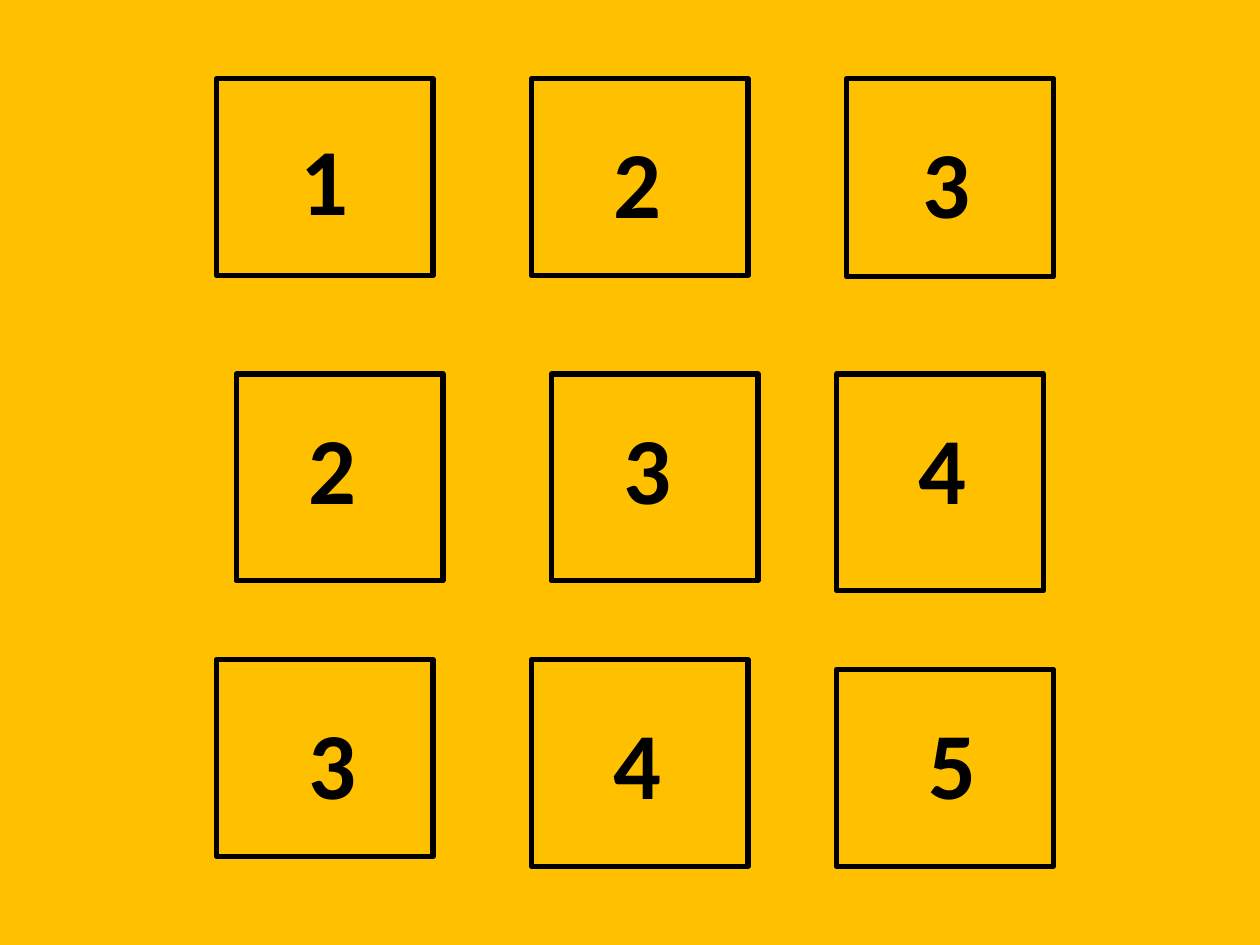
from pptx import Presentation
from pptx.dml.color import RGBColor
from pptx.enum.shapes import MSO_SHAPE as Shape
from pptx.enum.text import MSO_ANCHOR as Anchor, MSO_AUTO_SIZE as AutoSize, PP_ALIGN as Align
from pptx.oxml.ns import qn
from pptx.util import Inches, Pt
from lxml.etree import SubElement

UNIT = 10 / 128  # the slide is 128 columns by 96 rows


def color(hex_code):
    return RGBColor.from_string(hex_code)


class Board:
    ink, ground, font, size, border = "000000", "FFC000", "Calibri", 54, 3

    def __init__(self, deck):
        self.slide = deck.slides.add_slide(deck.slide_layouts[6])
        fill = self.slide.background.fill
        fill.solid()
        fill.fore_color.rgb = color(self.ground)

    def grid(self, *cells):
        return [Inches(cell * UNIT) for cell in cells]

    def square(self, col, row, cols, rows):
        box = self.slide.shapes.add_shape(Shape.RECTANGLE, *self.grid(col, row, cols, rows))
        box.shadow.inherit = False
        box.fill.background()
        box.line.color.rgb = color(self.ink)
        box.line.width = Pt(self.border)
        SubElement(box.element.spPr.find(qn("a:ln")), qn("a:round"))
        return box

    def add_number(self, frame, number):
        paragraph = frame.paragraphs[0]
        paragraph.alignment = Align.CENTER
        run = paragraph.add_run()
        run.text = str(number)
        run.font.name, run.font.size, run.font.bold = self.font, Pt(self.size), True
        run.font.color.rgb = color(self.ink)

    def label(self, col, row, number):
        frame = self.slide.shapes.add_textbox(*self.grid(col, row, 7.5, 13)).text_frame
        frame.word_wrap = False
        frame.auto_size = AutoSize.SHAPE_TO_FIT_TEXT
        self.add_number(frame, number)


# Squares as column, row, width, height; label columns and rows
SQUARES = [
    [(22, 8, 22, 20), (54, 8, 22, 20), (86, 8, 21, 20.1)],
    [(24, 38, 21, 21), (56, 38, 21, 21), (85, 38, 21, 22)],
    [(22, 67, 22, 20), (54, 67, 22, 21), (85, 68, 22, 20)],
]
LABEL_COLS = [(None, 61, 92.4), (30, 62, 92), (30, 61, 93)]
LABEL_ROWS = [12, 41, 71]


def main():
    deck = Presentation()
    deck.slide_width, deck.slide_height = Inches(10), Inches(7.5)
    board = Board(deck)

    # Each number is one more than the sum of its row and column
    for i, squares in enumerate(SQUARES):
        for j, place in enumerate(squares):
            square = board.square(*place)
            number = i + j + 1
            if LABEL_COLS[i][j] is None:  # the first number sits in its square
                square.text_frame.vertical_anchor = Anchor.MIDDLE
                board.add_number(square.text_frame, number)
            else:
                board.label(LABEL_COLS[i][j], LABEL_ROWS[i], number)

    deck.save("out.pptx")


if __name__ == "__main__":
    main()
